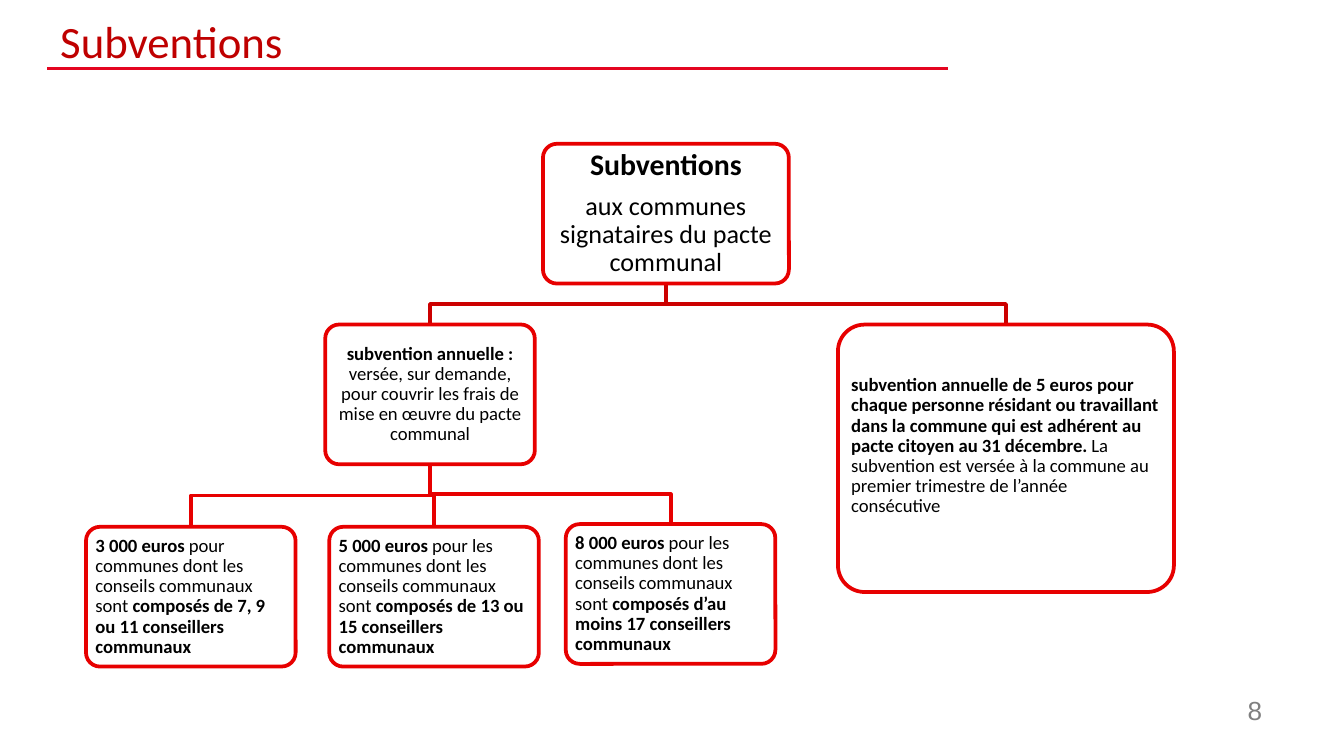
from lxml import etree
from pptx import Presentation
from pptx import util as u
from pptx.dml.color import RGBColor
from pptx.enum import shapes, text
from pptx.oxml import ns

HUE = {"rule": "E40520", "title": "BF0000", "edge": "E70000", "link": "CC0000",
       "ink": "000000", "page": "808080", "paper": "FFFFFF"}
ALIGN = {"l": text.PP_ALIGN.LEFT, "c": text.PP_ALIGN.CENTER, "r": text.PP_ALIGN.RIGHT}

deck = Presentation()
deck.slide_width = u.Inches(10)
deck.slide_height = deck.slide_width * 9 // 16
slide = deck.slides.add_slide(deck.slide_layouts[6])
items = slide.shapes
unit = deck.slide_width / 100


def grid(*cells):
    return [round(n * unit) for n in cells]


def write(shape, lines, size=(10,), font="Calibri", hue="ink", align="l",
          pad=(1, 0.5, 1, 0.5), mid=True, lead=1, gap=0):
    frame = shape.text_frame
    frame.word_wrap = True
    frame.vertical_anchor = text.MSO_ANCHOR.MIDDLE if mid else text.MSO_ANCHOR.TOP
    (frame.margin_left, frame.margin_top,
     frame.margin_right, frame.margin_bottom) = grid(*pad)
    for i, line in enumerate(lines):
        para = frame.paragraphs[0] if i == 0 else frame.add_paragraph()
        para.alignment = ALIGN[align]
        para.line_spacing = lead
        para.space_after = u.Pt(gap)
        for j, part in enumerate(line.split("*")):
            if part:
                run = para.add_run()
                run.text = part
                run.font.size = u.Pt(size[i])
                run.font.name = font
                run.font.bold = j % 2 == 1
                run.font.color.rgb = RGBColor.from_string(HUE[hue])


rule = items.add_connector(shapes.MSO_CONNECTOR.STRAIGHT, *grid(70.5, 5.1, 3.5, 5.1))
rule.line.color.rgb = RGBColor.from_string(HUE["rule"])
rule.line.width = u.Pt(1.5)
etree.SubElement(rule._element.spPr, ns.qn("a:effectLst"))

write(items.add_textbox(*grid(3.5, 1, 67.7, 4.1)), ["Subventions"],
      size=(24,), hue="title")
write(items.add_textbox(*grid(87.8, 51.2, 7.1, 4.1)), ["8"],
      size=(14,), font="Arial", hue="page", align="r", mid=False)

small = (15.6, 10.4)
slim = dict(pad=(0.4,) * 4)
nodes = {
    "root": ((40.4, 10.7, 18.3, 10.4),
             ["*Subventions*", "aux communes signataires du pacte communal"],
             dict(size=(16, 14), align="c", pad=(0.7,) * 4)),
    "year": ((24.2, 24.15, *small),
             ["*subvention annuelle : *versée, sur demande, pour couvrir les frais "
              "de mise en œuvre du pacte communal"],
             dict(align="c", **slim)),
    "head": ((62.35, 24.15, 25, 19.9),
             ["*subvention annuelle de 5 euros pour chaque personne résidant ou "
              "travaillant dans la commune qui est adhérent au pacte citoyen au "
              "31 décembre.* La subvention est versée à la commune au premier "
              "trimestre de l’année consécutive"],
             dict(pad=(0.4, 0.4, 0.4, 2.2))),
}
tiers = [
    ("3 000", 6.4, 39.2, "pour communes", "composés de 7, 9 ou 11"),
    ("5 000", 24.5, 39.2, "pour les communes", "composés de 13 ou 15"),
    ("8 000", 42.1, 39, "pour les communes", "composés d’au moins 17"),
]
for sum_, x, y, who, seats in tiers:
    nodes[sum_] = ((x, y, *small),
                   [f"*{sum_} euros *{who} dont les conseils communaux sont "
                    f"*{seats} conseillers communaux*"], slim)

links = [("root", "year", "link"), ("root", "head", "link")]
links += [("year", tier[0], "edge") for tier in tiers]
for top, low, hue in links:
    x, y, w, h = nodes[top][0]
    left, end, wide, _ = nodes[low][0]
    x, y, to = x + w / 2, y + h, left + wide / 2
    bend = (y + end) / 2
    pen = items.build_freeform(*grid(x, y))
    pen.add_line_segments([grid(*p) for p in ((x, bend), (to, bend), (to, end))],
                          close=False)
    link = pen.convert_to_shape()
    link.shadow.inherit = False
    link.fill.background()
    link.line.color.rgb = RGBColor.from_string(HUE[hue])
    link.line.width = u.Pt(2)

for place, lines, form in nodes.values():
    box = items.add_shape(shapes.MSO_SHAPE.ROUNDED_RECTANGLE, *grid(*place))
    box.adjustments[0] = 0.1
    box.shadow.inherit = False
    box.fill.solid()
    box.fill.fore_color.rgb = RGBColor.from_string(HUE["paper"])
    box.line.color.rgb = RGBColor.from_string(HUE["edge"])
    box.line.width = u.Pt(2)
    write(box, lines, lead=0.9, gap=5.6 if len(lines) > 1 else 0, **form)

deck.save("out.pptx")
